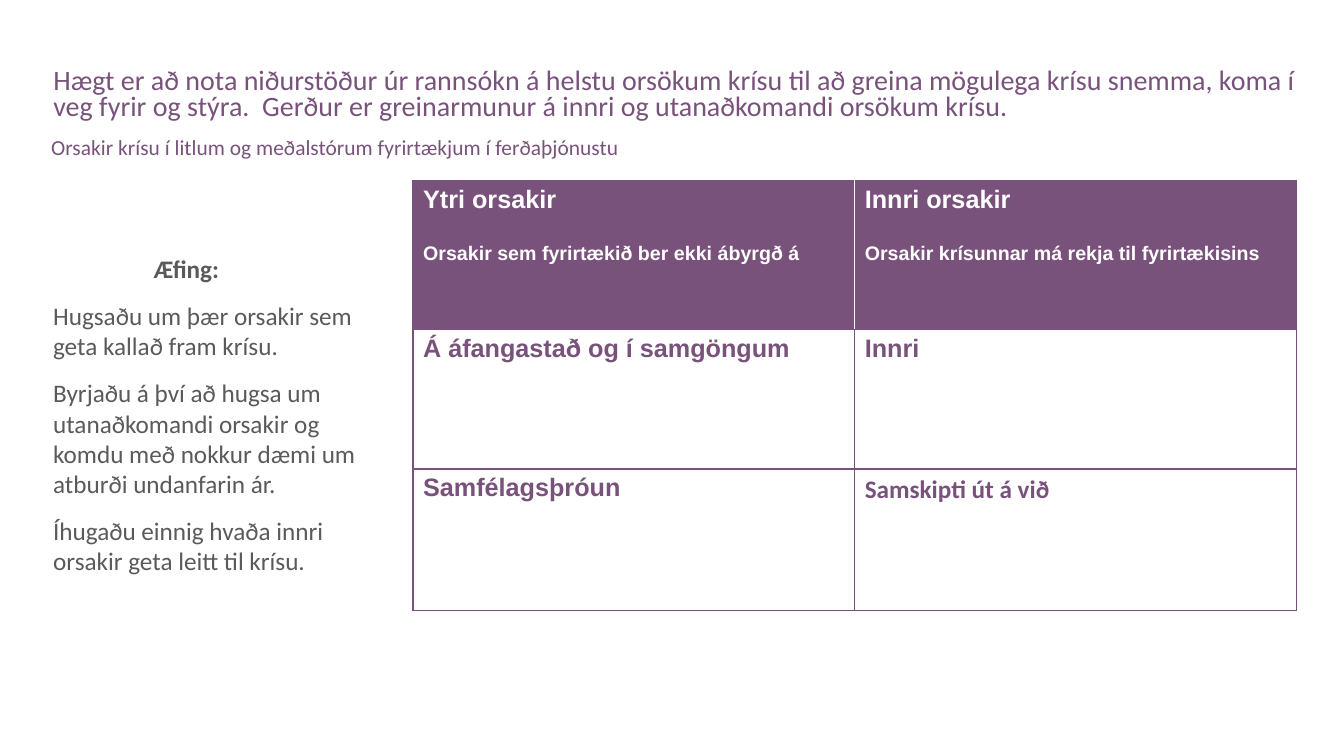
from pptx import Presentation
from pptx.dml.color import RGBColor
from pptx.enum.text import MSO_ANCHOR, MSO_AUTO_SIZE, PP_ALIGN
from pptx.oxml.ns import qn
from pptx.util import Cm, Pt
from lxml import etree

TOP, MIDDLE = MSO_ANCHOR.TOP, MSO_ANCHOR.MIDDLE
LEFT = PP_ALIGN.LEFT
NO_AUTOFIT = MSO_AUTO_SIZE.NONE
TITLE_ONLY = 5
PURPLE, GREY, WHITE = "79527B", "595A59", "FFFFFF"

INTRO = ("Hægt er að nota niðurstöður úr rannsókn á helstu orsökum krísu til að greina "
         "mögulega krísu snemma, koma í veg fyrir og stýra.  Gerður er greinarmunur á "
         "innri og utanaðkomandi orsökum krísu.")
SUBTITLE = "Orsakir krísu í litlum og meðalstórum fyrirtækjum í ferðaþjónustu"
EXERCISE = [
    "Æfing:",
    "Hugsaðu um þær orsakir sem geta kallað fram krísu.",
    "Byrjaðu á því að hugsa um utanaðkomandi orsakir og komdu með nokkur dæmi um "
    "atburði undanfarin ár.",
    "Íhugaðu einnig hvaða innri orsakir geta leitt til krísu.",
]
CAUSES = [
    [["Ytri orsakir", "Orsakir sem fyrirtækið ber ekki ábyrgð á"],
     ["Innri orsakir", "Orsakir krísunnar má rekja til fyrirtækisins"]],
    [["Á áfangastað og í samgöngum"], ["Innri"]],
    [["Samfélagsþróun"], ["Samskipti út á við"]],
]


def color(value):
    return RGBColor.from_string(value)


class CausesPage:
    """Holds the fonts and the slide, and adds each kind of element."""
    body_font, table_font = "Calibri", "Arial"

    def __init__(self, deck):
        self.page = deck.slides.add_slide(deck.slide_layouts[TITLE_ONLY])

    def style(self, paragraph, size, ink, bold=False, font=body_font):
        paragraph.alignment = LEFT
        for span in paragraph.runs:
            span.font.name = font
            span.font.size = Pt(size)
            span.font.bold = bold
            span.font.color.rgb = color(ink)

    def fill_text(self, box, place, texts, size, ink, anchor=TOP, line_spacing=1.0, gap=0):
        box.left, box.top, box.width, box.height = (Cm(length) for length in place)
        frame = box.text_frame
        frame.word_wrap = True
        frame.auto_size = NO_AUTOFIT
        frame.vertical_anchor = anchor
        frame.text = "\n".join(texts)
        for index, paragraph in enumerate(frame.paragraphs):
            paragraph.line_spacing = line_spacing
            paragraph.space_before = Pt(gap if index else 0)
            self.style(paragraph, size, ink)
        return frame

    def title(self, place, text, **options):
        self.fill_text(self.page.shapes.title, place, [text], **options)

    def text(self, place, texts, **options):
        box = self.page.shapes.add_textbox(0, 0, 0, 0)
        return self.fill_text(box, place, texts, **options)

    def borders(self, cell, **inks):
        properties = cell._tc.get_or_add_tcPr()
        for side in "LRTB":
            line = etree.SubElement(properties, qn(f"a:ln{side}"), w=str(Pt(1)))
            solid = etree.SubElement(line, qn("a:solidFill"))
            etree.SubElement(solid, qn("a:srgbClr"), val=inks.get(side, PURPLE))

    def table(self, left, top, column_width, row_heights, rows):
        count = len(rows[0])
        table = self.page.shapes.add_table(
            len(rows), count, Cm(left), Cm(top),
            Cm(column_width * count), Cm(sum(row_heights))).table
        table.first_row = table.horz_banding = False
        for column in table.columns:
            column.width = Cm(column_width)
        for row, height in zip(table.rows, row_heights):
            row.height = Cm(height)
        for row_index, row in enumerate(rows):
            for column_index, texts in enumerate(row):
                cell = table.cell(row_index, column_index)
                self.cell(cell, texts, row_index == 0, column_index == 0)
        return table

    def cell(self, cell, texts, is_header, is_first):
        inner_side = "R" if is_first else "L"
        self.borders(cell, **({inner_side: WHITE} if is_header else {}))
        if is_header:
            cell.fill.solid()
            cell.fill.fore_color.rgb = color(PURPLE)
        else:
            cell.fill.background()
        cell.text = "\n".join(texts)
        for index, paragraph in enumerate(cell.text_frame.paragraphs):
            paragraph.space_before = Pt(20.7 if index else 0)
            self.style(paragraph, 14 if index else 18, WHITE if is_header else PURPLE,
                       bold=True, font=self.table_font)


def main():
    deck = Presentation()
    deck.slide_width, deck.slide_height = Cm(33.87), Cm(19.05)
    page = CausesPage(deck)

    page.title((1.09, 1.6, 31.85, 1.63), INTRO, size=20, ink=PURPLE, line_spacing=0.8)
    page.text((1.04, 3.43, 31.9, 0.71), [SUBTITLE], size=15.3, ink=PURPLE, line_spacing=0.7)

    exercise = page.text((1.09, 4.55, 8.86, 11.8), EXERCISE, size=18, ink=GREY,
                         anchor=MIDDLE, gap=12)
    heading = exercise.paragraphs[0]
    heading._p.get_or_add_pPr().set("marL", str(Cm(2.54)))
    heading.runs[0].font.bold = True

    table = page.table(10.41, 4.55, 11.13, [3.76, 3.51, 3.56], CAUSES)
    contact = table.cell(2, 1).text_frame.paragraphs[0]
    page.style(contact, 18, PURPLE, bold=True)
    deck.save("out.pptx")


if __name__ == "__main__":
    main()
